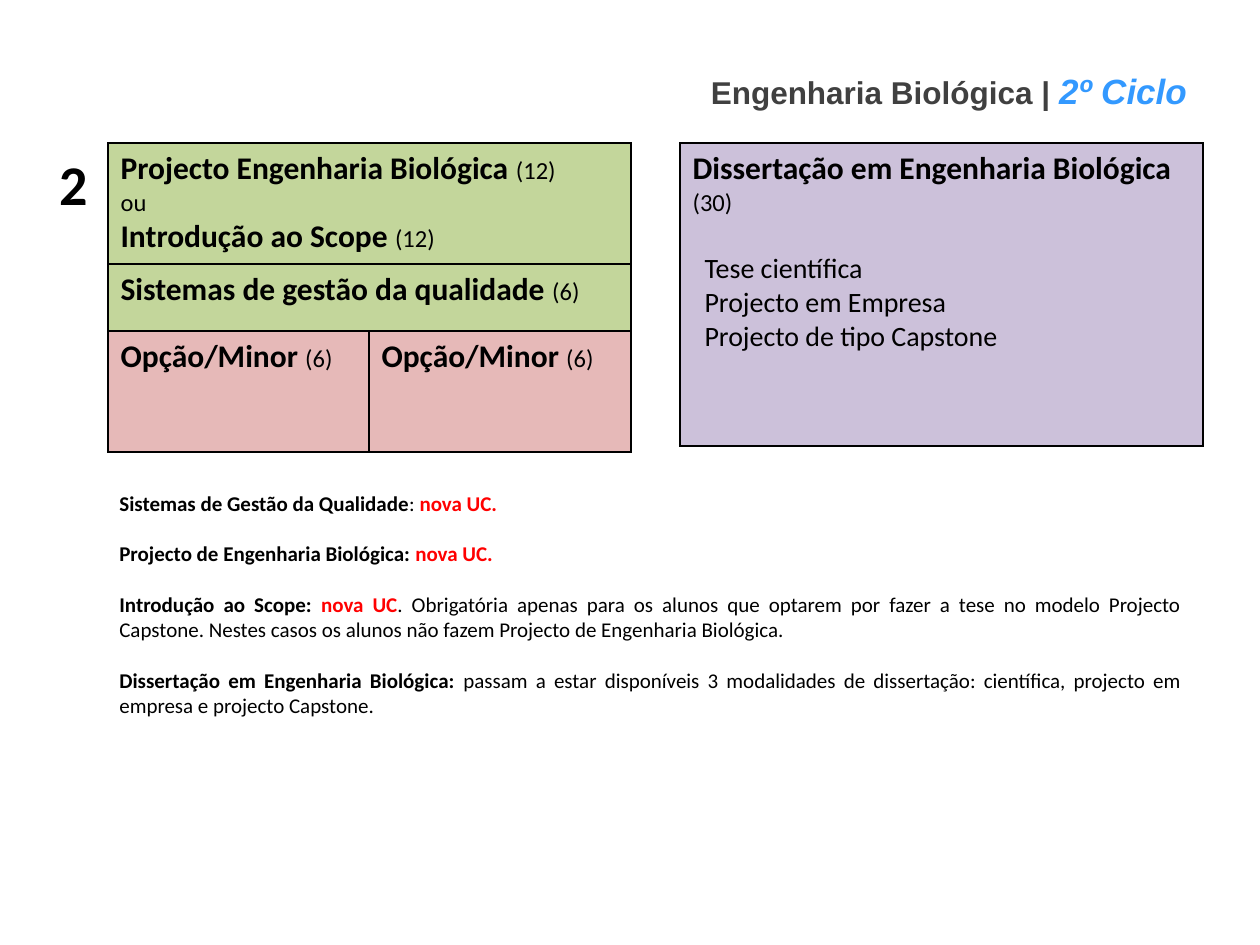
from lxml.etree import SubElement
from pptx import Presentation
from pptx.dml.color import RGBColor
from pptx.enum.text import MSO_ANCHOR as Anchor, PP_ALIGN as Align
from pptx.oxml import parse_xml
from pptx.oxml.ns import nsdecls, qn
from pptx.util import Pt

EMU_PER_PX = 914400 // 126
COLORS = {
    "black": "000000", "gray": "404040", "blue": "3399FF", "red": "FF0000",
    "green": "C3D69B", "pink": "E6B9B8", "purple": "CCC1DA",
}


def px(length):
    """Turn whole pixels into EMU."""
    return length * EMU_PER_PX


def rgb(name):
    """Look up a named colour."""
    return RGBColor.from_string(COLORS[name])


def add_run(paragraph, text, size, bold=False, color="black", font="Calibri", italic=False):
    """Append a formatted run to a paragraph."""
    run = paragraph.add_run()
    run.text = text
    run.font.size = Pt(size)
    run.font.bold = bold
    run.font.italic = italic
    run.font.name = font
    run.font.color.rgb = rgb(color)


def next_paragraph(text_frame, first):
    """Return the first paragraph or a new one."""
    return text_frame.paragraphs[0] if first else text_frame.add_paragraph()


def add_course(text_frame, name, credits, first=True):
    """Write a bold course name followed by its credits."""
    paragraph = next_paragraph(text_frame, first)
    add_run(paragraph, f"{name} ", 18, True)
    add_run(paragraph, f"({credits})", 14)


def style_cell(cell, color):
    """Give a cell its fill and thin black borders."""
    cell.fill.solid()
    cell.fill.fore_color.rgb = rgb(color)
    properties = cell._tc.get_or_add_tcPr()
    for position, side in enumerate(("lnL", "lnR", "lnT", "lnB")):
        border = parse_xml(f'<a:{side} {nsdecls("a")} w="{Pt(1)}"/>')
        fill = SubElement(border, qn("a:solidFill"))
        SubElement(fill, qn("a:srgbClr"), val=COLORS["black"])
        properties.insert(position, border)


def add_grid(slide, left, top, column_widths, row_heights, row_colors):
    """Add a bordered table with one fill per row."""
    frame = slide.shapes.add_table(
        len(row_heights), len(column_widths), px(left), px(top),
        px(sum(column_widths)), px(sum(row_heights)))
    table = frame.table
    table.first_row = table.horz_banding = False
    for column, width in zip(table.columns, column_widths):
        column.width = px(width)
    for row, height, color in zip(table.rows, row_heights, row_colors):
        row.height = px(height)
        for cell in row.cells:
            style_cell(cell, color)
    return table


def add_text_box(slide, left, top, width, height):
    """Add a wrapping text box and return its text frame."""
    text_frame = slide.shapes.add_textbox(px(left), px(top), px(width), px(height)).text_frame
    text_frame.word_wrap = True
    return text_frame


def add_title(slide):
    """Add the course title with the highlighted cycle."""
    text_frame = add_text_box(slide, 638, 37, 622, 86)
    text_frame.vertical_anchor = Anchor.MIDDLE
    paragraph = text_frame.paragraphs[0]
    paragraph.alignment = Align.CENTER
    paragraph.line_spacing = 1.5
    add_run(paragraph, "Engenharia Biológica | ", 18, True, "gray", "Arial")
    add_run(paragraph, "2º Ciclo", 20, True, "blue", "Arial", True)


def add_dissertation(slide):
    """Add the dissertation table with its three modalities."""
    table = add_grid(slide, 680, 143, [523], [303], ["purple"])
    text_frame = table.cell(0, 0).text_frame
    add_course(text_frame, "Dissertação em Engenharia Biológica", 30)
    modalities = ("Tese científica", "Projecto em Empresa", "Projecto de tipo Capstone")
    for index, modality in enumerate(modalities):
        paragraph = text_frame.add_paragraph()
        paragraph._p.get_or_add_pPr().set("marL", str(px(12)))
        if index == 0:
            paragraph.space_before = Pt(19.5)
        add_run(paragraph, modality, 16)


def add_courses(slide):
    """Add the table of courses and options."""
    table = add_grid(slide, 108, 143, [261, 262], [121, 67, 121], ["green", "green", "pink"])
    for row in range(2):
        table.cell(row, 0).merge(table.cell(row, 1))
    project = table.cell(0, 0).text_frame
    add_course(project, "Projecto Engenharia Biológica", 12)
    add_run(project.add_paragraph(), "ou", 14)
    add_course(project, "Introdução ao Scope", 12, first=False)
    add_course(table.cell(1, 0).text_frame, "Sistemas de gestão da qualidade", 6)
    for column in range(2):
        add_course(table.cell(2, column).text_frame, "Opção/Minor", 6)


def add_notes(slide, notes):
    """Add justified remarks, each a list of run settings."""
    text_frame = add_text_box(slide, 107, 484, 1087, 267)
    for index, runs in enumerate(notes):
        paragraph = next_paragraph(text_frame, index == 0)
        paragraph.alignment = Align.JUSTIFY
        if index:
            paragraph.space_before = Pt(14.6)
        for text, bold, color in runs:
            add_run(paragraph, text, 12, bold, color)


def main():
    """Build and save the slide."""
    presentation = Presentation()
    presentation.slide_width, presentation.slide_height = px(1260), px(945)
    slide = presentation.slides.add_slide(presentation.slide_layouts[6])
    add_dissertation(slide)
    add_courses(slide)
    year = add_text_box(slide, 47, 143, 39, 81)
    add_run(year.paragraphs[0], "2", 32, True)
    add_title(slide)
    add_notes(slide, [
        [("Sistemas de Gestão da Qualidade", True, "black"), (": ", False, "black"),
         ("nova UC.", True, "red")],
        [("Projecto de Engenharia Biológica: ", True, "black"), ("nova UC.", True, "red")],
        [("Introdução ao Scope: ", True, "black"), ("nova UC", True, "red"),
         (". Obrigatória apenas para os alunos que optarem por fazer a tese no modelo "
          "Projecto Capstone. Nestes casos os alunos não fazem Projecto de Engenharia "
          "Biológica.", False, "black")],
        [("Dissertação em Engenharia Biológica: ", True, "black"),
         ("passam a estar disponíveis 3 modalidades de dissertação: científica, projecto "
          "em empresa e projecto Capstone.", False, "black")],
    ])
    presentation.save("out.pptx")


if __name__ == "__main__":
    main()
